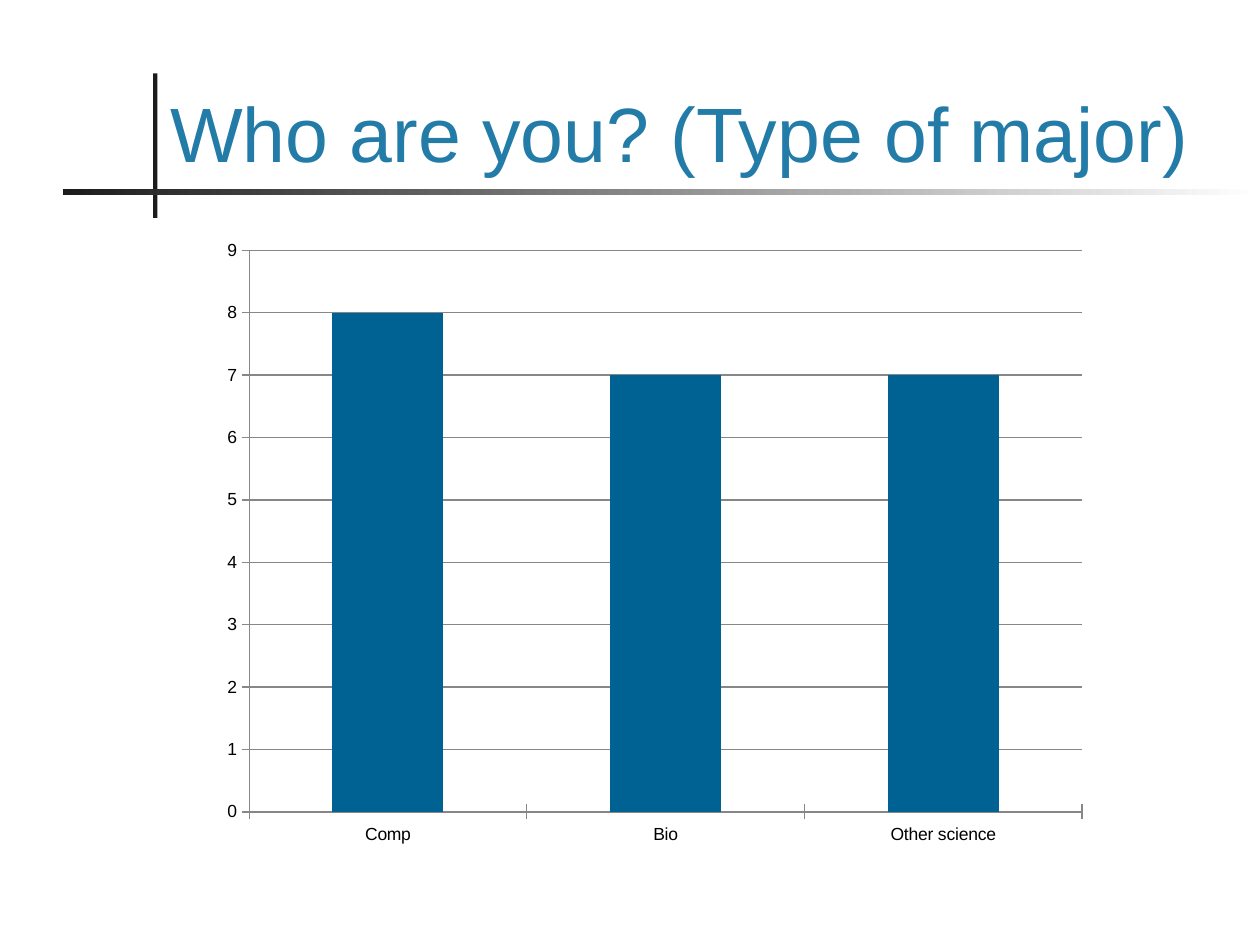
from lxml.etree import SubElement
from pptx import Presentation
from pptx.chart.data import CategoryChartData
from pptx.dml.color import RGBColor
from pptx.enum.chart import XL_CHART_TYPE as ChartType, XL_TICK_MARK as TickMark
from pptx.enum.shapes import MSO_SHAPE as Preset
from pptx.enum.text import MSO_ANCHOR as Anchor, MSO_AUTO_SIZE as AutoSize, PP_ALIGN as Align
from pptx.oxml.ns import qn
from pptx.util import Pt


def color(value):
    return RGBColor.from_string(value)


def apply(target, values):
    for name, value in values.items():
        setattr(target, name, value)


class SurveySlide:
    font = "Arial"
    ink = "1C1C1C"
    paper = "FFFFFF"
    heading = "227CA7"
    bar = "006293"
    grid = "878787"
    label = "000000"

    def __init__(self, deck):
        self.slide = deck.slides.add_slide(deck.slide_layouts[5])
        background = self.slide.background.fill
        background.solid()
        background.fore_color.rgb = color(self.paper)

    def rule(self, box, fade_to=None):
        bar = self.slide.shapes.add_shape(Preset.RECTANGLE, *map(Pt, box))
        bar.shadow.inherit = False
        bar.line.fill.background()
        if fade_to is None:
            bar.fill.solid()
            bar.fill.fore_color.rgb = color(self.ink)
            return
        bar.fill.gradient()
        bar.fill.gradient_angle = 0
        for stop, shade, position in zip(bar.fill.gradient_stops, (self.ink, fade_to), (0, 1)):
            stop.color.rgb = color(shade)
            stop.position = position

    def title(self, text, box):
        title = self.slide.shapes.title
        apply(title, dict(zip(("left", "top", "width", "height"), map(Pt, box))))
        apply(title.text_frame, {
            "text": text, "word_wrap": True,
            "auto_size": AutoSize.NONE, "vertical_anchor": Anchor.BOTTOM,
        })
        heading = title.text_frame.paragraphs[0]
        heading.alignment = Align.LEFT
        apply(heading.font, {"name": self.font, "size": Pt(44)})
        heading.font.color.rgb = color(self.heading)

    def columns(self, series_name, counts, box, plot):
        data = CategoryChartData()
        data.categories = list(counts)
        data.add_series(series_name, list(counts.values()))
        frame = self.slide.shapes.add_chart(ChartType.COLUMN_CLUSTERED, *map(Pt, box), data)
        chart = frame.chart
        apply(chart, {"has_legend": False, "has_title": False})
        apply(chart.font, {"name": self.font, "size": Pt(10)})
        chart.font.color.rgb = color(self.label)

        majors = chart.plots[0]
        apply(majors, {"gap_width": 150, "vary_by_categories": False})
        fill = majors.series[0].format.fill
        fill.solid()
        fill.fore_color.rgb = color(self.bar)

        category, value = chart.category_axis, chart.value_axis
        apply(value, {
            "minimum_scale": 0, "maximum_scale": 9, "major_unit": 1,
            "has_major_gridlines": True,
        })
        for axis in (category, value):
            axis.major_tick_mark = TickMark.CROSS
        for line in (category.format.line, value.format.line, value.major_gridlines.format.line):
            line.color.rgb = color(self.grid)
            line.width = Pt(0.75)
        self.place_plot(chart, plot)

    def place_plot(self, chart, plot):
        area = chart.element.find(".//" + qn("c:plotArea"))
        layout = area.find(qn("c:layout"))
        if layout is None:
            layout = SubElement(area, qn("c:layout"))
            area.insert(0, layout)
        manual = SubElement(layout, qn("c:manualLayout"))
        settings = {"layoutTarget": "inner", "xMode": "edge", "yMode": "edge"}
        settings.update(zip("xywh", plot))
        for name, setting in settings.items():
            SubElement(manual, qn("c:" + name)).set("val", str(setting))


def main():
    deck = Presentation()
    apply(deck, {"slide_width": Pt(720), "slide_height": Pt(540)})
    survey = SurveySlide(deck)
    survey.rule((87.5, 42, 2.5, 82.5))
    survey.rule((36, 108, 684, 3.5), fade_to=survey.paper)
    survey.title("Who are you? (Type of major)", (90, 15, 613.5, 90))
    survey.columns(
        "Series 1", {"Comp": 8, "Bio": 7, "Other science": 7},
        box=(119.5, 130.5, 508.5, 359), plot=(0.045, 0.035, 0.936, 0.894),
    )
    deck.save("out.pptx")


if __name__ == "__main__":
    main()
